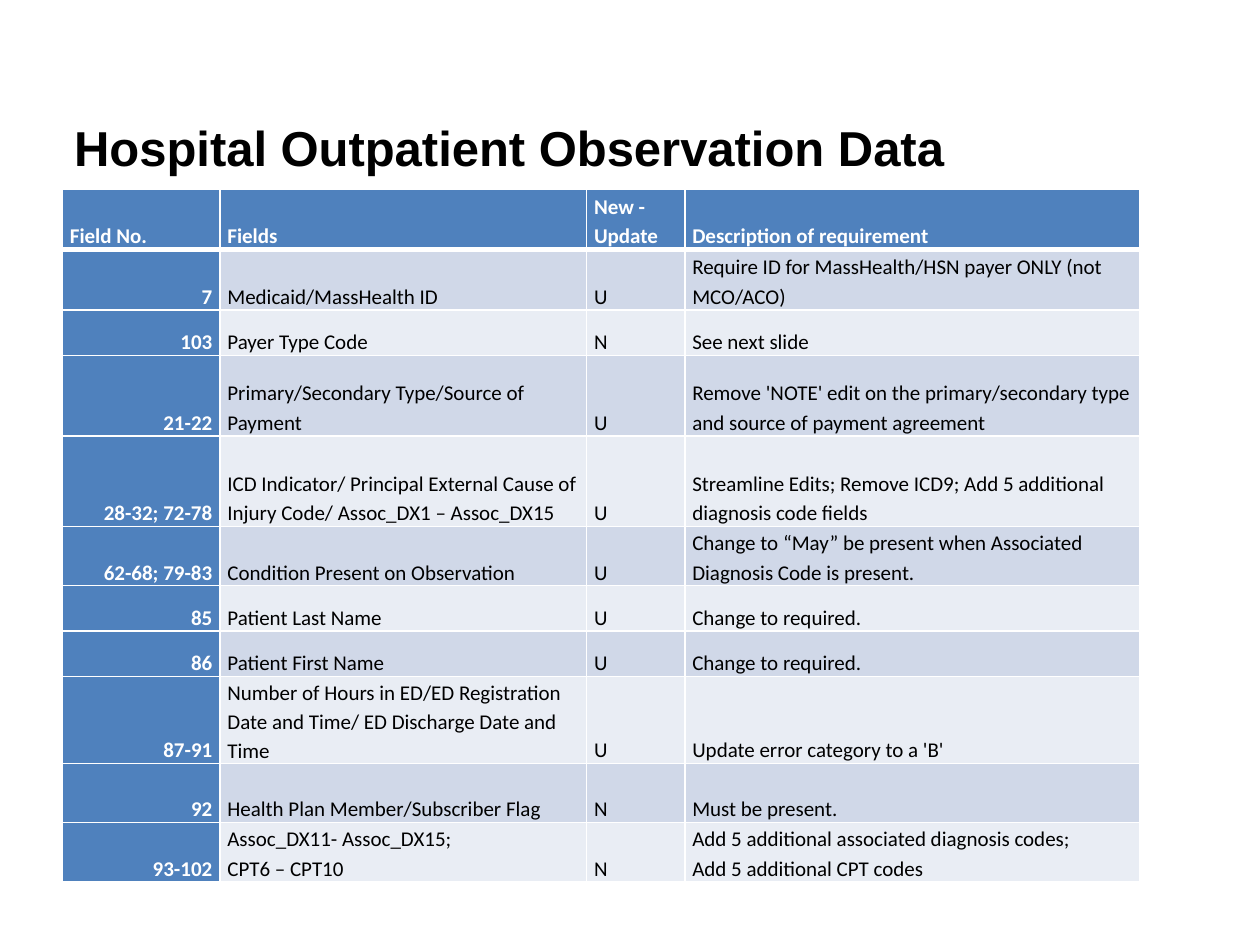
from dataclasses import dataclass
from lxml.etree import SubElement
from pptx import Presentation
from pptx.dml.color import RGBColor as Rgb
from pptx.enum.text import MSO_ANCHOR as Anchor, PP_ALIGN as Align
from pptx.oxml.ns import qn
from pptx.util import Inches, Pt


@dataclass(frozen=True)
class Theme:
    head: str = "4F81BD"
    bands: tuple = ("D0D8E8", "E9EDF4")
    ink: str = "000000"
    white: str = "FFFFFF"
    title: int = 28
    body: int = 12
    sans: str = "Arial"
    text: str = "Calibri"
    thin: int = 1
    thick: int = 3


class Deck:
    unit = 0.1

    def __init__(self, theme):
        self.theme = theme
        self.show = Presentation()
        self.show.slide_width = self.size(100)
        self.show.slide_height = self.size(75)
        self.slide = self.show.slides.add_slide(self.show.slide_layouts[6])

    def size(self, count):
        return Inches(count * self.unit)

    def style(self, para, font, size, color, bold):
        for run in para.runs:
            run.font.name = font
            run.font.size = Pt(size)
            run.font.bold = bold
            run.font.color.rgb = Rgb.from_string(color)

    def title(self, text, *place):
        box = self.slide.shapes.add_textbox(*map(self.size, place))
        frame = box.text_frame
        frame.word_wrap = True
        frame.vertical_anchor = Anchor.MIDDLE
        frame.text = text
        look = self.theme
        self.style(frame.paragraphs[0], look.sans, look.title, look.ink, True)

    def border(self, cell, row):
        props = cell._tc.get_or_add_tcPr()
        look = self.theme
        wide = {"T": row == 1, "B": row == 0}
        for spot, side in enumerate("LRTB"):
            width = look.thick if wide.get(side) else look.thin
            line = SubElement(props, qn(f"a:ln{side}"), w=str(Pt(width)))
            fill = SubElement(line, qn("a:solidFill"))
            SubElement(fill, qn("a:srgbClr"), val=look.white)
            props.insert(spot, line)

    def cell(self, cell, text, row, col):
        look = self.theme
        strong = row == 0 or col == 0
        cell.fill.solid()
        back = look.head if strong else look.bands[(row - 1) % 2]
        cell.fill.fore_color.rgb = Rgb.from_string(back)
        cell.margin_left = cell.margin_right = self.size(0.6)
        cell.margin_top = cell.margin_bottom = 0
        cell.vertical_anchor = Anchor.BOTTOM
        cell.text_frame.text = text
        for para in cell.text_frame.paragraphs:
            para.line_spacing = 1.15
            para.alignment = Align.RIGHT if row and not col else Align.LEFT
            color = look.white if strong else look.ink
            self.style(para, look.text, look.body, color, strong)
        self.border(cell, row)

    def table(self, data, left, top, cols, rows):
        place = map(self.size, (left, top, sum(cols), sum(rows)))
        grid = self.slide.shapes.add_table(len(rows), len(cols), *place).table
        grid.first_col = True
        for col, width in zip(grid.columns, cols):
            col.width = self.size(width)
        for row, height in zip(grid.rows, rows):
            row.height = self.size(height)
        for row, line in enumerate(data):
            for col, text in enumerate(line):
                self.cell(grid.cell(row, col), text, row, col)


FIELDS = [
    ("Field No.", "Fields", "New - Update", "Description of requirement"),
    ("7", "Medicaid/MassHealth ID", "U",
     "Require ID for MassHealth/HSN payer ONLY (not MCO/ACO)"),
    ("103", "Payer Type Code", "N", "See next slide"),
    ("21-22", "Primary/Secondary Type/Source of Payment", "U",
     "Remove 'NOTE' edit on the primary/secondary type "
     "and source of payment agreement"),
    ("28-32; 72-78",
     "ICD Indicator/ Principal External Cause of "
     "Injury Code/ Assoc_DX1 – Assoc_DX15", "U",
     "Streamline Edits; Remove ICD9; Add 5 additional diagnosis code fields"),
    ("62-68; 79-83", "Condition Present on Observation", "U",
     "Change to “May” be present when Associated Diagnosis Code is present."),
    ("85", "Patient Last Name", "U", "Change to required."),
    ("86", "Patient First Name", "U", "Change to required."),
    ("87-91",
     "Number of Hours in ED/ED Registration "
     "Date and Time/ ED Discharge Date and Time", "U",
     "Update error category to a 'B'"),
    ("92", "Health Plan Member/Subscriber Flag", "N", "Must be present."),
    ("93-102", "Assoc_DX11- Assoc_DX15;\nCPT6 – CPT10", "N",
     "Add 5 additional associated diagnosis codes;\n"
     "Add 5 additional CPT codes"),
]
COLS = (12.5, 29.1, 7.8, 36.1)
ROWS = (4.8, 4.8, 3.6, 6.4, 7.2, 4.7, 3.6, 3.6, 6.4, 4.7, 4.7)


def main():
    deck = Deck(Theme())
    deck.title("Hospital Outpatient Observation Data", 4.9, 7.4, 87.9, 8.6)
    deck.table(FIELDS, 4.95, 15, COLS, ROWS)
    deck.show.save("out.pptx")


if __name__ == "__main__":
    main()
